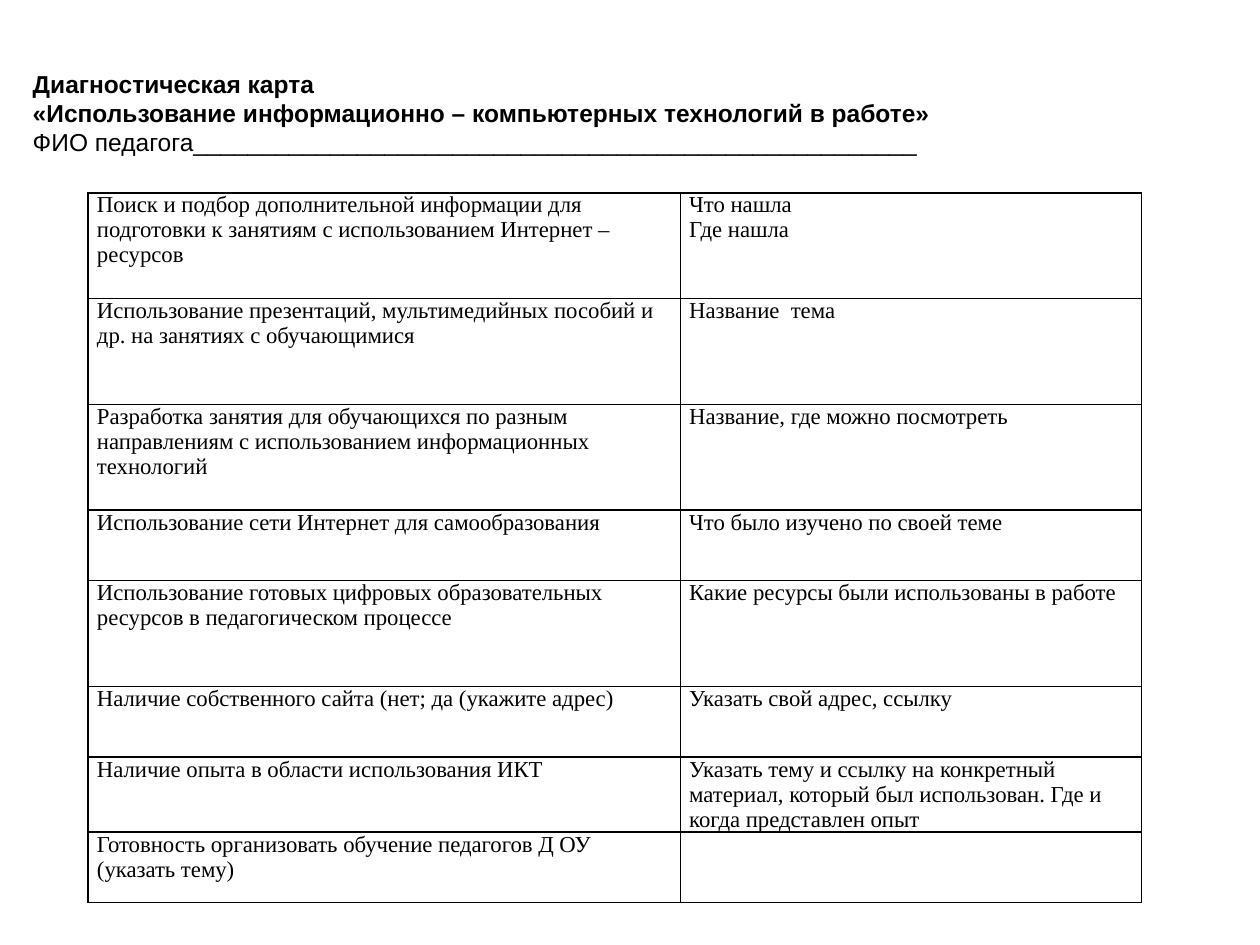
from dataclasses import dataclass
from typing import NamedTuple

from lxml.etree import SubElement
from pptx import Presentation
from pptx.dml.color import RGBColor
from pptx.enum.text import MSO_ANCHOR, MSO_AUTO_SIZE, PP_ALIGN
from pptx.oxml.ns import qn
from pptx.util import Inches, Pt


@dataclass(frozen=True)
class Theme:
    ink: str = "000000"
    title_font: str = "Arial"
    title_size: int = 14
    table_font: str = "Times New Roman"
    table_size: int = 13
    border: int = 1


class Criterion(NamedTuple):
    units: int  # row height in grid units
    task: str
    answer: str


THEME = Theme()
SLIDE_W, SLIDE_H = Inches(10), Inches(7.5)
ROW_UNIT = Inches(0.28)
COLUMNS = (0.47, 0.366)  # shares of the slide width

TITLE = (
    ("Диагностическая карта", True),
    ("«Использование информационно – компьютерных технологий в работе»", True),
    ("ФИО педагога_____________________________________________________", False),
)

CRITERIA = (
    Criterion(3, "Поиск и подбор дополнительной информации для подготовки к занятиям "
                 "с использованием Интернет – ресурсов", "Что нашла\nГде нашла"),
    Criterion(3, "Использование презентаций, мультимедийных пособий и др. "
                 "на занятиях с обучающимися", "Название  тема"),
    Criterion(3, "Разработка занятия для обучающихся по разным направлениям "
                 "с использованием информационных технологий",
              "Название, где можно посмотреть"),
    Criterion(2, "Использование сети Интернет для самообразования",
              "Что было изучено по своей теме"),
    Criterion(3, "Использование готовых цифровых образовательных ресурсов "
                 "в педагогическом процессе",
              "Какие ресурсы были использованы в работе"),
    Criterion(2, "Наличие собственного сайта (нет; да (укажите адрес)",
              "Указать свой адрес, ссылку"),
    Criterion(2, "Наличие опыта в области использования ИКТ",
              "Указать тему и ссылку на конкретный материал, который был использован. "
              "Где и когда представлен опыт"),
    Criterion(2, "Готовность организовать обучение педагогов Д ОУ (указать тему)", ""),
)


def set_all(obj, values: dict) -> None:
    for name, value in values.items():
        setattr(obj, name, value)


def format_font(font, name: str, size: int, bold: bool = False) -> None:
    set_all(font, {"name": name, "size": Pt(size), "bold": bold})
    font.color.rgb = RGBColor.from_string(THEME.ink)


def draw_title(s) -> None:
    sp = s.shapes.title
    set_all(sp, {"left": Inches(0.16), "top": Inches(0.5),
                 "width": Inches(9.68), "height": Inches(0.79)})
    tf = sp.text_frame
    tf.text = "\n".join(text for text, _ in TITLE)
    set_all(tf, {"word_wrap": True, "auto_size": MSO_AUTO_SIZE.NONE,
                 "vertical_anchor": MSO_ANCHOR.MIDDLE})
    for p, (_, bold) in zip(tf.paragraphs, TITLE):
        p.alignment = PP_ALIGN.LEFT
        format_font(p.runs[0].font, THEME.title_font, THEME.title_size, bold)


def draw_borders(cell) -> None:
    tc_pr = cell._tc.get_or_add_tcPr()
    for side in ("lnL", "lnR", "lnT", "lnB"):
        ln = SubElement(tc_pr, qn(f"a:{side}"), w=str(Pt(THEME.border)))
        SubElement(SubElement(ln, qn("a:solidFill")), qn("a:srgbClr"), val=THEME.ink)


def fill_cell(cell, text: str) -> None:
    set_all(cell, {"margin_left": Inches(0.07), "margin_right": Inches(0.07),
                   "margin_top": 0, "margin_bottom": 0})
    draw_borders(cell)
    cell.fill.background()
    cell.text = text
    for p in cell.text_frame.paragraphs:
        for r in p.runs:
            format_font(r.font, THEME.table_font, THEME.table_size)


def draw_table(s) -> None:
    width = int(SLIDE_W * sum(COLUMNS))
    height = ROW_UNIT * sum(c.units for c in CRITERIA)
    table = s.shapes.add_table(len(CRITERIA), len(COLUMNS), Inches(0.7),
                               Inches(1.53), width, height).table
    set_all(table, {"first_row": False, "horz_banding": False})
    for column, share in zip(table.columns, COLUMNS):
        column.width = int(SLIDE_W * share)
    for row, criterion in zip(table.rows, CRITERIA):
        row.height = ROW_UNIT * criterion.units
        for cell, text in zip(row.cells, (criterion.task, criterion.answer)):
            fill_cell(cell, text)


def main() -> None:
    prs = Presentation()
    set_all(prs, {"slide_width": SLIDE_W, "slide_height": SLIDE_H})
    s = prs.slides.add_slide(prs.slide_layouts[5])  # title only
    # Table of criteria and its heading
    draw_table(s)
    draw_title(s)
    prs.save("out.pptx")


if __name__ == "__main__":
    main()
